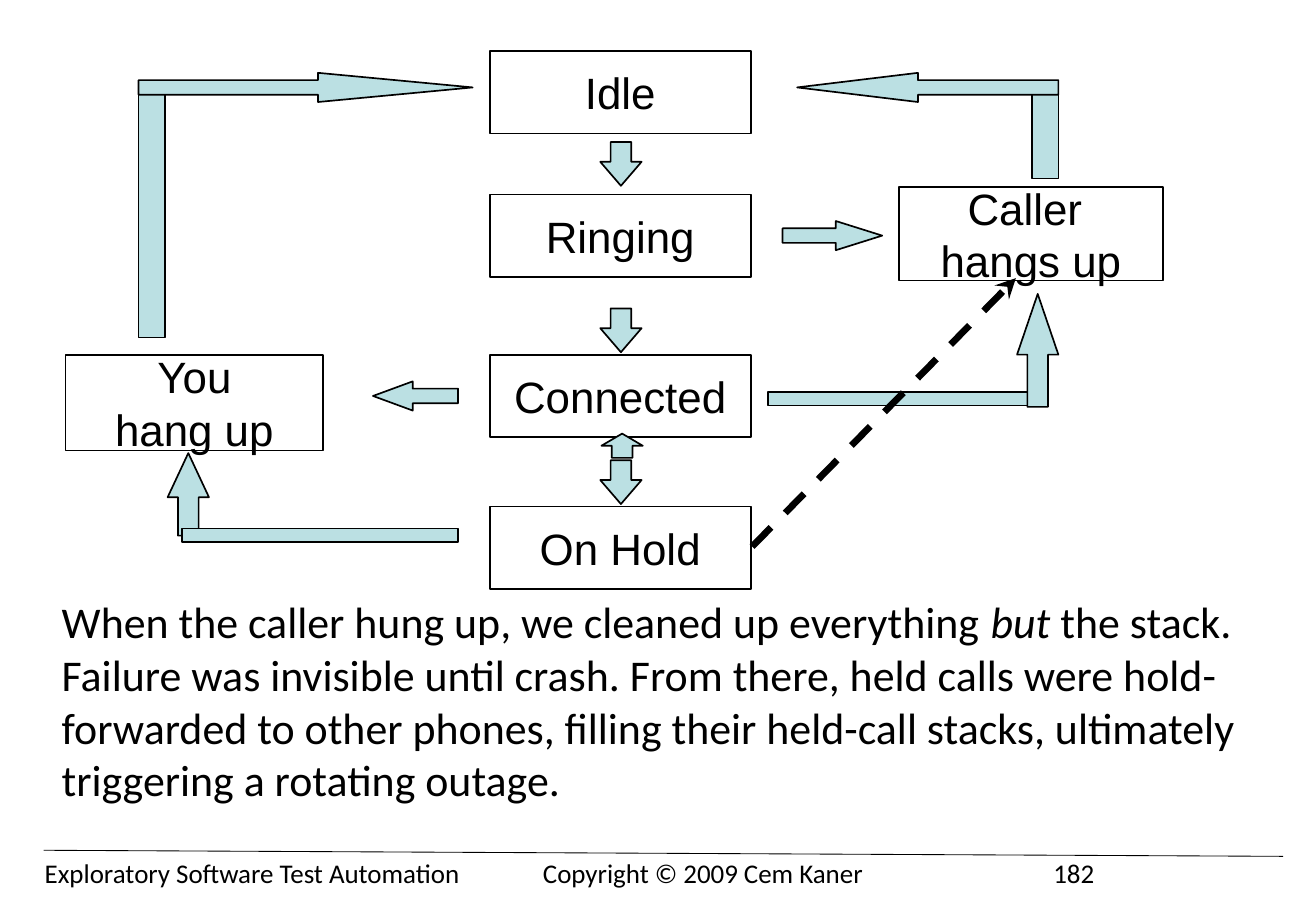
import pptx
import pptx.util
import pptx.dml.color
import pptx.enum.dml
import pptx.enum.shapes
import pptx.enum.text
import pptx.oxml
import pptx.oxml.ns

Inches = pptx.util.Inches
Pt = pptx.util.Pt
RGBColor = pptx.dml.color.RGBColor
Kind = pptx.enum.shapes.MSO_SHAPE
Text = pptx.enum.text
qn = pptx.oxml.ns.qn

BLACK = RGBColor(0x00, 0x00, 0x00)
WHITE = RGBColor(0xFF, 0xFF, 0xFF)
TEAL = RGBColor(0xBB, 0xE0, 0xE3)

deck = pptx.Presentation()
deck.slide_width = Inches(10.83)
deck.slide_height = Inches(7.5)
slide = deck.slides.add_slide(deck.slide_layouts[6])
slide.background.fill.solid()
slide.background.fill.fore_color.rgb = WHITE
shapes = slide.shapes


def add_run(para, text, size, font, italic=False):
    run = para.add_run()
    run.text = text
    run.font.size = Pt(size)
    run.font.name = font
    run.font.italic = italic
    run.font.color.rgb = BLACK


def add_line(x1, y1, x2, y2, width):
    line = shapes.add_connector(pptx.enum.shapes.MSO_CONNECTOR.STRAIGHT,
                                Inches(x1), Inches(y1), Inches(x2), Inches(y2))
    line.line.color.rgb = BLACK
    line.line.width = Pt(width)
    props = line._element.spPr
    props.append(props.makeelement(qn("a:effectLst"), {}))
    return line


# Footer, laid out on two tab stops
foot = shapes.add_textbox(Inches(0.27), Inches(7), Inches(10.24), Inches(0.37))
foot.text_frame.word_wrap = True
para = foot.text_frame.paragraphs[0]
add_run(para, "Exploratory Software Test Automation\tCopyright © 2009 Cem Kaner\t182",
        16, "Calibri")
props = para._p.get_or_add_pPr()
tabs = props.makeelement(qn("a:tabLst"), {})
props.append(tabs)
for stop in (4.1, 8.3):
    tabs.append(tabs.makeelement(qn("a:tab"), {"pos": str(Inches(stop)), "algn": "l"}))
add_line(0.36, 7, 10.56, 7.05, 0.5)

# Call states
states = [
    (4.03, 0.42, 2.15, 0.68, ["Idle"]),
    (4.03, 1.6, 2.15, 0.68, ["Ringing"]),
    (4.03, 2.92, 2.15, 0.68, ["Connected"]),
    (4.03, 4.17, 2.15, 0.68, ["On Hold"]),
    (7.4, 1.54, 2.17, 0.77, ["Caller ", "hangs up"]),
    (0.54, 2.92, 2.12, 0.79, ["You", "hang up"]),
]
boxes = {}
for x, y, w, h, words in states:
    box = shapes.add_shape(Kind.RECTANGLE, Inches(x), Inches(y), Inches(w), Inches(h))
    box.shadow.inherit = False
    box.fill.background()
    box.line.color.rgb = BLACK
    box.line.width = Pt(1)
    frame = box.text_frame
    frame.word_wrap = False
    frame.vertical_anchor = Text.MSO_ANCHOR.MIDDLE
    for i, word in enumerate(words):
        para = frame.add_paragraph() if i else frame.paragraphs[0]
        para.alignment = Text.PP_ALIGN.CENTER
        add_run(para, word, 26, "Arial")
    boxes[words[0]] = box

# Block arrows and the bars that lead into them; the last value is the head length
BAR, UP, DOWN = Kind.RECTANGLE, Kind.UP_ARROW, Kind.DOWN_ARROW
LEFT, RIGHT = Kind.LEFT_ARROW, Kind.RIGHT_ARROW
moves = [
    (BAR, 6.32, 3.23, 2.27, 0.11, None),
    (UP, 8.37, 2.42, 0.34, 0.93, 1.47),
    (DOWN, 4.94, 1.17, 0.34, 0.36, 0.58),
    (DOWN, 4.94, 2.54, 0.34, 0.36, 0.58),
    (DOWN, 4.94, 3.79, 0.34, 0.36, 0.58),
    (RIGHT, 6.44, 1.82, 0.82, 0.24, 1.59),
    (LEFT, 3.07, 3.14, 0.7, 0.24, 1.36),
    (UP, 1.38, 3.73, 0.34, 0.68, 1.07),
    (BAR, 1.5, 4.35, 2.27, 0.11, None),
    (BAR, 1.14, 0.73, 0.22, 2.05, None),
    (RIGHT, 1.14, 0.6, 2.75, 0.24, 5.3),
    (BAR, 8.49, 0.73, 0.22, 0.74, None),
    (LEFT, 6.56, 0.6, 2.15, 0.24, 4.14),
    (UP, 4.95, 3.57, 0.34, 0.2, 0.5),
]
for kind, x, y, w, h, head in moves:
    move = shapes.add_shape(kind, Inches(x), Inches(y), Inches(w), Inches(h))
    move.shadow.inherit = False
    move.fill.solid()
    move.fill.fore_color.rgb = TEAL
    move.line.color.rgb = BLACK
    move.line.width = Pt(1)
    if head:
        move.adjustments[0] = 0.5
        move.adjustments[1] = head

# Dashed path from On Hold to the caller hanging up
path_line = add_line(8.36, 2.29, 6.18, 4.51, 4)
path_line.end_connect(boxes["On Hold"], 3)
path_line.line.dash_style = pptx.enum.dml.MSO_LINE.DASH
stroke = path_line.line._get_or_add_ln()
stroke.append(stroke.makeelement(qn("a:headEnd"), {"type": "stealth"}))

# Explanation
note = shapes.add_textbox(Inches(0.41), Inches(4.84), Inches(9.93), Inches(1.85))
note.text_frame.word_wrap = True
note.text_frame.vertical_anchor = Text.MSO_ANCHOR.MIDDLE
para = note.text_frame.paragraphs[0]
add_run(para, "When the caller hung up, we cleaned up everything ", 26, "Calibri")
add_run(para, "but", 26, "Calibri", True)
add_run(para, " the stack. Failure was invisible until crash. From there, held calls "
        "were hold-forwarded to other phones, filling their held-call stacks, "
        "ultimately triggering a rotating outage.", 26, "Calibri")

deck.save("out.pptx")
